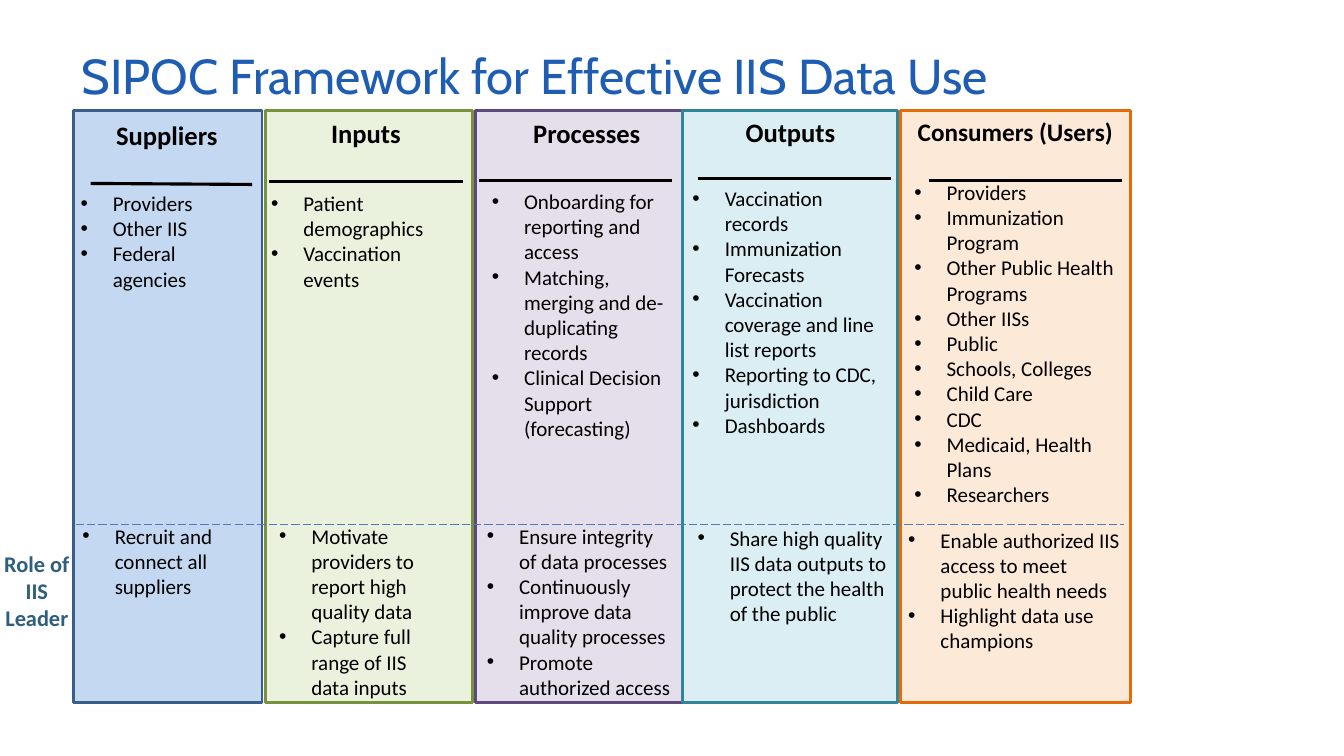
from dataclasses import dataclass

from lxml.etree import SubElement
from pptx import Presentation
from pptx.dml.color import RGBColor
from pptx.enum.dml import MSO_LINE
from pptx.enum.shapes import MSO_CONNECTOR, MSO_SHAPE
from pptx.enum.text import MSO_ANCHOR, MSO_AUTO_SIZE, PP_ALIGN
from pptx.oxml.ns import qn
from pptx.util import Emu, Pt

EMU_PER_PX = 9144
BLACK = "000000"


def px(*lengths):
    return [Emu(length * EMU_PER_PX) for length in lengths]


def colour(hex_string):
    return RGBColor.from_string(hex_string)


@dataclass
class Column:
    panel: tuple
    fill: str
    border: str
    heading: str
    heading_box: tuple
    heading_size: int
    rule: tuple
    items: list
    items_box: tuple
    roles: list
    roles_box: tuple


COLUMNS = [
    Column((73, 187), "C5D8F1", "395E89",
           "Suppliers", (72, 113, 187, 42), 19, (90, 182, 250, 183),
           ["Providers", "Other IIS", "Federal agencies"], (70, 184, 165, 136),
           ["Recruit and connect all suppliers"], (72, 514, 187, 162)),
    Column((263, 206), "EAF1DD", "76923C",
           "Inputs", (263, 111, 200, 42), 19, (267, 180, 459, 180),
           ["Patient demographics", "Vaccination events"], (259, 184, 200, 162),
           ["Motivate providers to report high quality data",
            "Capture full range of IIS data inputs"], (267, 514, 187, 187)),
    Column((472, 206), "E5DFEC", "5F497A",
           "Processes", (482, 111, 200, 42), 19, (475, 179, 667, 179),
           ["Onboarding for reporting and access",
            "Matching, merging and de-duplicating records",
            "Clinical Decision Support (forecasting)"], (478, 182, 206, 288),
           ["Ensure integrity of data processes",
            "Continuously improve data quality processes",
            "Promote authorized access"], (473, 514, 206, 187)),
    Column((677, 213), "DAEEF3", "31859B",
           "Outputs", (684, 110, 200, 42), 19, (692, 177, 884, 177),
           ["Vaccination records", "Immunization Forecasts",
            "Vaccination coverage and line list reports",
            "Reporting to CDC, jurisdiction", "Dashboards"], (677, 179, 213, 288),
           ["Share high quality IIS data outputs to protect the health of the public"],
           (682, 516, 213, 111)),
    Column((893, 228), "FDE9D8", "E36C09",
           "Consumers (Users)", (897, 111, 220, 40), 18, (921, 179, 1113, 179),
           ["Providers", "Immunization Program", "Other Public Health Programs",
            "Other IISs", "Public", "Schools, Colleges", "Child Care", "CDC",
            "Medicaid, Health Plans", "Researchers"], (897, 173, 220, 364),
           ["Enable authorized IIS access to meet public health needs",
            "Highlight data use champions"], (891, 518, 230, 136)),
]


class SlideBuilder:
    title_font = "Cabin"
    body_font = "Calibri"
    list_size = 15

    def __init__(self, slide):
        self.slide = slide

    def format_font(self, paragraph, name, size, hex_string, bold=False):
        font = paragraph.font
        font.name = name
        font.size = Pt(size)
        font.bold = bold
        font.color.rgb = colour(hex_string)

    def title(self, text, box):
        shape = self.slide.shapes.title
        shape.left, shape.top, shape.width, shape.height = px(*box)
        frame = shape.text_frame
        frame.text = text
        frame.auto_size = MSO_AUTO_SIZE.NONE
        frame.vertical_anchor = MSO_ANCHOR.MIDDLE
        paragraph = frame.paragraphs[0]
        paragraph.alignment = PP_ALIGN.LEFT
        paragraph.line_spacing = 0.9
        self.format_font(paragraph, self.title_font, 35, "1E5DB2")

    def panel(self, box, fill, border):
        shape = self.slide.shapes.add_shape(MSO_SHAPE.RECTANGLE, *px(*box))
        shape.shadow.inherit = False
        shape.fill.solid()
        shape.fill.fore_color.rgb = colour(fill)
        shape.line.color.rgb = colour(border)
        shape.line.width = Pt(2)

    def line(self, ends, hex_string, width, dash=None):
        connector = self.slide.shapes.add_connector(MSO_CONNECTOR.STRAIGHT, *px(*ends))
        connector.line.color.rgb = colour(hex_string)
        connector.line.width = Pt(width)
        if dash:
            connector.line.dash_style = dash
        SubElement(connector._element.spPr, qn("a:effectLst"))

    def text_paragraphs(self, lines, box):
        frame = self.slide.shapes.add_textbox(*px(*box)).text_frame
        frame.word_wrap = True
        frame.text = "\n".join(lines)
        return frame.paragraphs

    def label(self, lines, box, size, hex_string=BLACK):
        for paragraph in self.text_paragraphs(lines, box):
            paragraph.alignment = PP_ALIGN.CENTER
            self.format_font(paragraph, self.body_font, size, hex_string, bold=True)

    def bullet_list(self, items, box):
        margin, indent = px(32, -33)
        for paragraph in self.text_paragraphs(items, box):
            properties = paragraph._p.get_or_add_pPr()
            properties.set("marL", str(margin))
            properties.set("indent", str(indent))
            bullet_colour = SubElement(properties, qn("a:buClr"))
            SubElement(bullet_colour, qn("a:srgbClr"), val=BLACK)
            SubElement(properties, qn("a:buFont"), typeface="Arial")
            SubElement(properties, qn("a:buChar"), char="•")
            self.format_font(paragraph, self.body_font, self.list_size, BLACK)


def main():
    presentation = Presentation()
    presentation.slide_width, presentation.slide_height = px(1333, 750)
    slide = presentation.slides.add_slide(presentation.slide_layouts[5])
    builder = SlideBuilder(slide)

    builder.title("SIPOC Framework for Effective IIS Data Use", (71, 38, 1030, 81))
    for column in COLUMNS:
        left, width = column.panel
        builder.panel((left, 110, width, 587), column.fill, column.border)
    for column in COLUMNS:
        builder.label([column.heading], column.heading_box, column.heading_size)
        builder.line(column.rule, BLACK, 2.25)
        builder.bullet_list(column.items, column.items_box)
        builder.bullet_list(column.roles, column.roles_box)
    builder.line((75, 520, 1115, 520), "4A7DBA", 0.75, MSO_LINE.LONG_DASH)
    builder.label(["Role of", "IIS Leader"], (-9, 541, 91, 91), 16, "2E5F7D")

    presentation.save("out.pptx")


if __name__ == "__main__":
    main()
